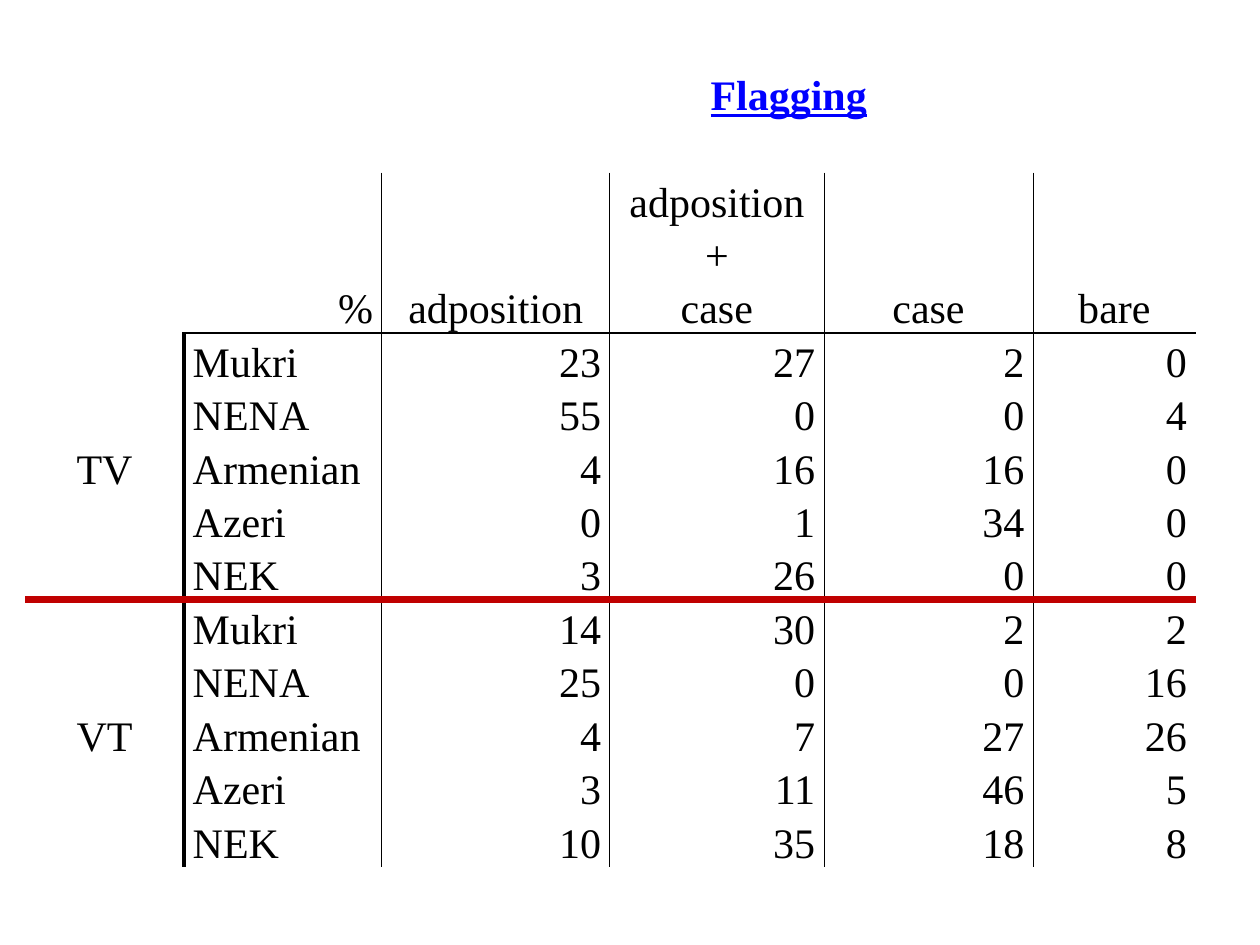
import pptx
import pptx.util
import pptx.dml.color
import pptx.enum.text
import pptx.oxml
import pptx.oxml.ns

ALIGN = pptx.enum.text.PP_ALIGN
ANCHOR = pptx.enum.text.MSO_ANCHOR

COLUMN_WIDTHS = [1.26, 1.57, 1.81, 1.7, 1.66, 1.29]
TITLE_ROW, HEADER_ROW, DATA_ROW = 0.85, 1.27, 0.42
HEADERS = [["%"], ["adposition"], ["adposition+", "case"], ["case"], ["bare"]]
LANGUAGES = ["Mukri", "NENA", "Armenian", "Azeri", "NEK"]
GROUPS = {
    "TV": [(23, 27, 2, 0), (55, 0, 0, 4), (4, 16, 16, 0), (0, 1, 34, 0), (3, 26, 0, 0)],
    "VT": [(14, 30, 2, 2), (25, 0, 0, 16), (4, 7, 27, 26), (3, 11, 46, 5), (10, 35, 18, 8)],
}
FIRST_DATA = 2
SECOND_GROUP = FIRST_DATA + len(LANGUAGES)


def color(value):
    return pptx.dml.color.RGBColor.from_string(value)


def vertical_rule(edge, row):
    """Width and colour of the line on a column edge, or None."""
    first_row = FIRST_DATA if edge == 1 else 1
    widths = {1: 2.25, 2: 1, 3: 0.5, 4: 0.5, 5: 0.5}
    return (widths[edge], "000000") if edge in widths and row >= first_row else None


def horizontal_rule(edge, column):
    """Width and colour of the line on a row edge, or None."""
    if edge == SECOND_GROUP:
        return 4.5, "C00000"
    return (1, "000000") if edge == FIRST_DATA and column >= 1 else None


class TablePage:
    font = "Times New Roman"
    size = 24
    line_spacing = 1.15
    side_inset = 0.07
    plain_style = "{2D5ABB26-0587-4C30-8999-92F81FD0307C}"

    def __init__(self, deck):
        self.page = deck.slides.add_slide(deck.slide_layouts[6])

    def add_grid(self, left, top, widths, heights):
        inches = pptx.util.Inches
        frame = self.page.shapes.add_table(
            len(heights), len(widths), inches(left), inches(top),
            inches(sum(widths)), inches(sum(heights)))
        self.table = frame.table
        self.table.first_row = self.table.horz_banding = False
        properties = self.table._tbl.tblPr
        properties.find(pptx.oxml.ns.qn("a:tableStyleId")).text = self.plain_style
        for column, width in zip(self.table.columns, widths):
            column.width = inches(width)
        for row, height in zip(self.table.rows, heights):
            row.height = inches(height)

    def merge_cells(self, row, column, last_row, last_column):
        self.table.cell(row, column).merge(self.table.cell(last_row, last_column))

    def add_cell_text(self, row, column, lines, align, anchor=ANCHOR.BOTTOM,
                      ink="000000", heading=False, bottom_inset=0):
        cell = self.table.cell(row, column)
        cell.vertical_anchor = anchor
        cell.margin_bottom = pptx.util.Inches(bottom_inset)
        for index, line in enumerate(lines):
            frame = cell.text_frame
            para = frame.add_paragraph() if index else frame.paragraphs[0]
            para.alignment = align
            para.line_spacing = self.line_spacing
            span = para.add_run()
            span.text = line
            span.font.name = self.font
            span.font.size = pptx.util.Pt(self.size)
            span.font.bold = span.font.underline = heading
            span.font.color.rgb = color(ink)

    def prepare_cells(self):
        """Set insets, rules and fills over the whole grid, after merging."""
        for row in range(len(self.table.rows)):
            for column in range(len(self.table.columns)):
                cell = self.table.cell(row, column)
                cell.margin_left = cell.margin_right = pptx.util.Inches(self.side_inset)
                cell.margin_top = cell.margin_bottom = 0
                tall = cell.span_height if cell.is_merge_origin else 1
                wide = cell.span_width if cell.is_merge_origin else 1
                self.rule_cell(cell, {
                    "lnL": vertical_rule(column, row),
                    "lnR": vertical_rule(column + wide, row),
                    "lnT": horizontal_rule(row, column),
                    "lnB": horizontal_rule(row + tall, column),
                })
                if row >= FIRST_DATA and column >= 2:
                    cell.fill.solid()
                    cell.fill.fore_color.rgb = color("FFFFFF")
                else:
                    cell.fill.background()

    def rule_cell(self, cell, rules):
        properties = cell._tc.get_or_add_tcPr()
        namespace = pptx.oxml.ns.nsdecls("a")
        for side, rule in rules.items():
            if rule:
                width, ink = rule
                size = f' w="{int(pptx.util.Pt(width))}"'
                paint = f'<a:solidFill><a:srgbClr val="{ink}"/></a:solidFill>'
            else:
                size, paint = "", "<a:noFill/>"
            properties.append(pptx.oxml.parse_xml(
                f"<a:{side} {namespace}{size}>{paint}</a:{side}>"))


def main():
    deck = pptx.Presentation()
    deck.slide_width = pptx.util.Inches(10)
    deck.slide_height = pptx.util.Inches(7.5)

    page = TablePage(deck)
    data_rows = len(GROUPS) * len(LANGUAGES)
    page.add_grid(0.2, 0.52, COLUMN_WIDTHS,
                  [TITLE_ROW, HEADER_ROW] + [DATA_ROW] * data_rows)
    page.merge_cells(0, 0, 1, 0)
    page.merge_cells(0, 2, 0, 5)
    for top in (FIRST_DATA, SECOND_GROUP):
        page.merge_cells(top, 0, top + len(LANGUAGES) - 1, 0)
    page.prepare_cells()

    page.add_cell_text(0, 2, ["Flagging"], ALIGN.CENTER, ink="0000FF",
                       heading=True, bottom_inset=DATA_ROW)
    for column, lines in enumerate(HEADERS, 1):
        page.add_cell_text(1, column, lines, ALIGN.RIGHT if column == 1 else ALIGN.CENTER)
    for group_index, (group, records) in enumerate(GROUPS.items()):
        top = FIRST_DATA + group_index * len(LANGUAGES)
        page.add_cell_text(top, 0, [group], ALIGN.CENTER, ANCHOR.MIDDLE)
        for row, (language, shares) in enumerate(zip(LANGUAGES, records), top):
            page.add_cell_text(row, 1, [language], ALIGN.JUSTIFY)
            for column, share in enumerate(shares, 2):
                page.add_cell_text(row, column, [str(share)], ALIGN.RIGHT)

    deck.save("out.pptx")


if __name__ == "__main__":
    main()
